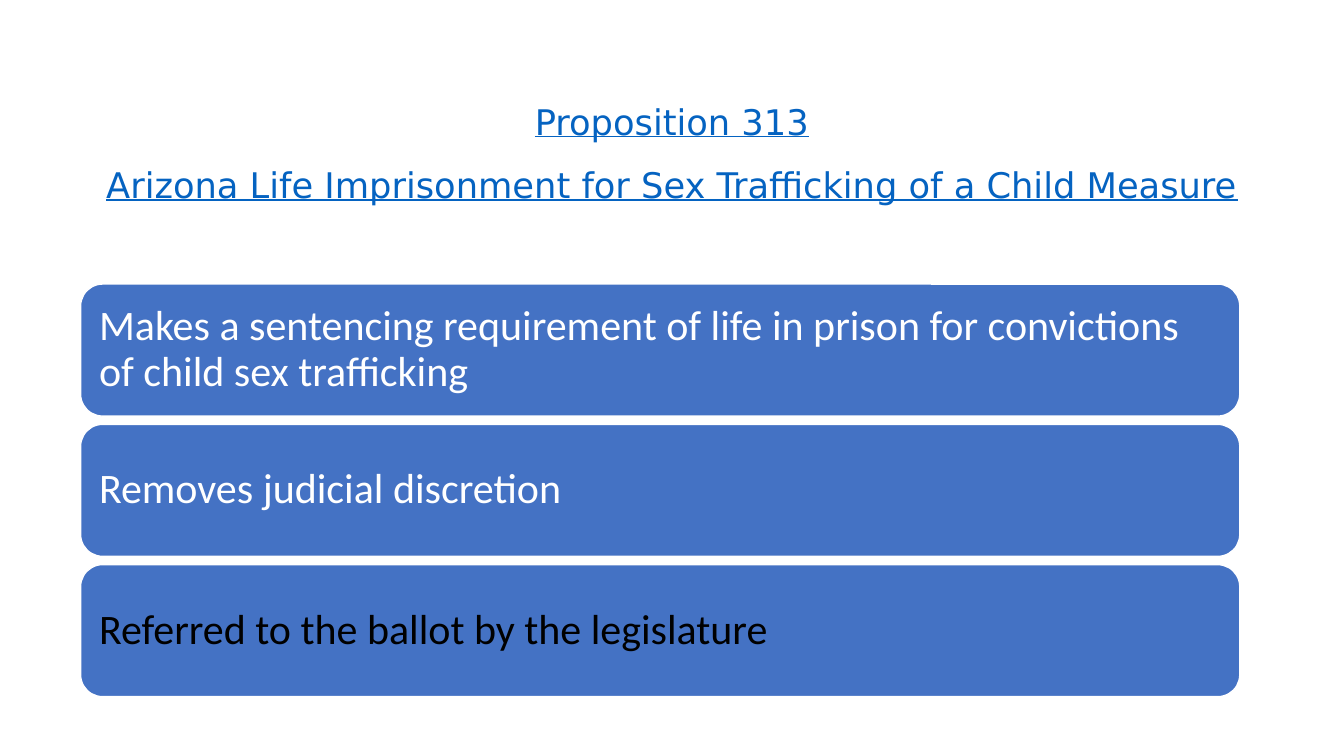
from pptx import Presentation
from pptx.dml.color import RGBColor
from pptx.enum.shapes import MSO_SHAPE
from pptx.enum.text import MSO_ANCHOR, PP_ALIGN
from pptx.util import Pt

TITLE = "Proposition 313\vArizona Life Imprisonment for Sex Trafficking of a Child Measure"
# (text, colour name in THEME)
POINTS = [
    ("Makes a sentencing requirement of life in prison for convictions of child sex trafficking", "light"),
    ("Removes judicial discretion", "light"),
    ("Referred to the ballot by the legislature", "dark"),
]
THEME = {
    "link": RGBColor(0x05, 0x63, 0xC1),
    "panel": RGBColor(0x44, 0x72, 0xC4),
    "light": RGBColor(0xFF, 0xFF, 0xFF),
    "dark": RGBColor(0, 0, 0),
    "title_font": "DejaVu Sans",
    "title_size": Pt(25.2),
    "body_font": "Calibri",
    "body_size": Pt(30),
}
PANEL_LEFT, PANEL_TOP = 57.6, 202.9
PANEL_WIDTH, PANEL_HEIGHT, PANEL_PITCH = 828, 94.3, 100.2
PANEL_INSET = 8.6


def write(shape, text, font_name, size, colour, alignment, spacing, underline=False):
    frame = shape.text_frame
    frame.word_wrap = True
    frame.vertical_anchor = MSO_ANCHOR.MIDDLE
    paragraph = frame.paragraphs[0]
    paragraph.text = text
    paragraph.alignment = alignment
    paragraph.line_spacing = spacing
    for run in paragraph.runs:
        run.font.name = font_name
        run.font.size = size
        run.font.color.rgb = colour
        run.font.underline = underline


def add_panel(slide, index, text, colour):
    panel = slide.shapes.add_shape(
        MSO_SHAPE.ROUNDED_RECTANGLE, Pt(PANEL_LEFT), Pt(PANEL_TOP + index * PANEL_PITCH),
        Pt(PANEL_WIDTH), Pt(PANEL_HEIGHT))
    panel.shadow.inherit = False
    panel.fill.solid()
    panel.fill.fore_color.rgb = THEME["panel"]
    panel.line.color.rgb = THEME["light"]
    panel.line.width = Pt(1)
    panel.text_frame.margin_left = panel.text_frame.margin_right = Pt(PANEL_INSET)
    write(panel, text, THEME["body_font"], THEME["body_size"], THEME[colour],
          PP_ALIGN.LEFT, 0.9)


def main():
    presentation = Presentation()
    presentation.slide_width, presentation.slide_height = Pt(960), Pt(540)
    slide = presentation.slides.add_slide(presentation.slide_layouts[6])
    title = slide.shapes.add_textbox(Pt(66), Pt(28.8), Pt(828), Pt(145.4))
    write(title, TITLE, THEME["title_font"], THEME["title_size"], THEME["link"],
          PP_ALIGN.CENTER, 1.5, underline=True)
    for index, (text, colour) in enumerate(POINTS):
        add_panel(slide, index, text, colour)
    presentation.save("out.pptx")


if __name__ == "__main__":
    main()
